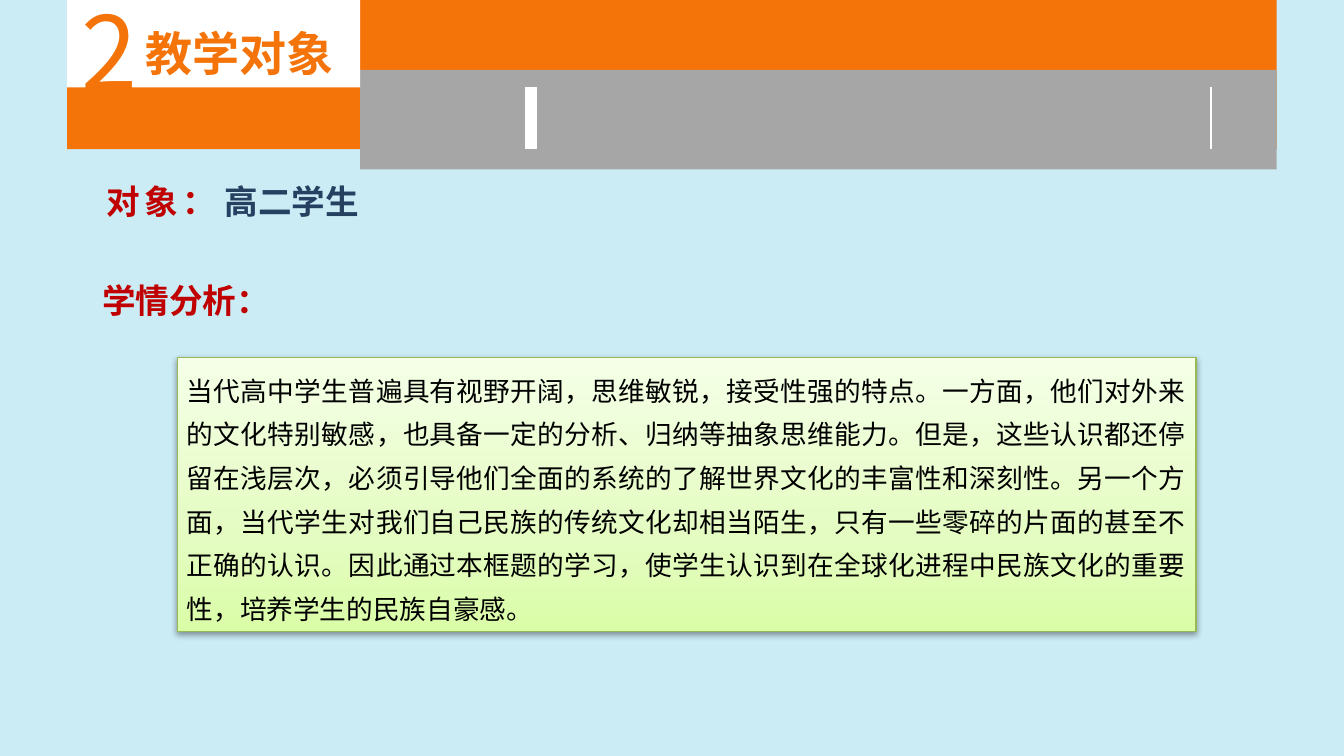
from dataclasses import dataclass

from lxml import etree
from pptx import Presentation
from pptx import util as u
from pptx.dml.color import RGBColor
from pptx.enum import shapes, text
from pptx.oxml import ns, parse_xml
from pptx.shapes.autoshape import Shape
from pptx.slide import Slide

SKY = RGBColor(0xCB, 0xEC, 0xF5)
ORANGE = RGBColor(0xF4, 0x74, 0x0A)
GRAY = RGBColor(0xA6, 0xA6, 0xA6)
WHITE = RGBColor(0xFF, 0xFF, 0xFF)
RED = RGBColor(0xC0, 0x00, 0x00)
NAVY = RGBColor(0x25, 0x40, 0x61)
BLACK = RGBColor(0x00, 0x00, 0x00)
GREEN = RGBColor(0x98, 0xB9, 0x55)
GRADIENT_STOPS = (
    (0, RGBColor(0xDA, 0xFD, 0xA7)),
    (35, RGBColor(0xE4, 0xFC, 0xC2)),
    (100, RGBColor(0xF5, 0xFF, 0xE7)),
)

SLIDE_WIDTH = u.Inches(10)
SLIDE_HEIGHT = SLIDE_WIDTH * 9 // 16
HEADING_FONT = "Noto Sans CJK SC"
BODY_FONT = "Arial"
BODY_SPACING = u.Pt(23.4)
ANALYSIS = (
    "当代高中学生普遍具有视野开阔，思维敏锐，接受性强的特点。"
    "一方面，他们对外来的文化特别敏感，也具备一定的分析、归纳等抽象思维能力。"
    "但是，这些认识都还停留在浅层次，必须引导他们全面的系统的了解世界文化的丰富性和深刻性。"
    "另一个方面，当代学生对我们自己民族的传统文化却相当陌生，"
    "只有一些零碎的片面的甚至不正确的认识。"
    "因此通过本框题的学习，使学生认识到在全球化进程中民族文化的重要性，培养学生的民族自豪感。"
)


@dataclass(frozen=True)
class Box:
    left: float
    top: float
    width: float
    height: float


@dataclass(frozen=True)
class TextStyle:
    size: float
    color: RGBColor
    bold: bool = False
    font: str = HEADING_FONT
    align: text.PP_ALIGN = text.PP_ALIGN.LEFT
    spacing: float | int | None = None


@dataclass(frozen=True)
class Label:
    words: str
    box: Box
    color: RGBColor
    align: text.PP_ALIGN


@dataclass(frozen=True)
class Divider:
    x: float
    weight: float


LABELS = (
    Label("对象：", Box(0.72, 1.28, 0.71, 0.4), RED, text.PP_ALIGN.JUSTIFY),
    Label("高二学生", Box(1.6, 1.28, 4.54, 0.4), NAVY, text.PP_ALIGN.JUSTIFY),
    Label("学情分析：", Box(0.69, 2.02, 1.28, 0.4), RED, text.PP_ALIGN.LEFT),
)
DIVIDERS = (Divider(3.95, 6.5), Divider(9.01, 1.5))


def inches(box: Box) -> tuple[int, ...]:
    return tuple(u.Inches(n) for n in (box.left, box.top, box.width, box.height))


def add_rectangle(slide: Slide, box: Box, color: RGBColor) -> Shape:
    shape = slide.shapes.add_shape(shapes.MSO_SHAPE.RECTANGLE, *inches(box))
    shape.shadow.inherit = False
    shape.fill.solid()
    shape.fill.fore_color.rgb = color
    shape.line.fill.background()
    return shape


def add_divider(slide: Slide, divider: Divider) -> None:
    x = u.Inches(divider.x)
    line = slide.shapes.add_connector(
        shapes.MSO_CONNECTOR.STRAIGHT, x, u.Inches(0.65), x, u.Inches(1.11)
    )
    line.line.color.rgb = WHITE
    line.line.width = u.Pt(divider.weight)
    etree.SubElement(line._element.spPr, ns.qn("a:effectLst"))


def write(shape: Shape, words: str, style: TextStyle) -> None:
    shape.text_frame.text = words
    paragraph = shape.text_frame.paragraphs[0]
    paragraph.alignment = style.align
    paragraph.line_spacing = style.spacing
    run = paragraph.runs[0]
    run.font.size = u.Pt(style.size)
    run.font.bold = style.bold
    run.font.name = style.font
    run.font.color.rgb = style.color
    east_asian = etree.SubElement(run._r.rPr, ns.qn("a:ea"))
    east_asian.set("typeface", HEADING_FONT)


def set_compact_frame(shape: Shape) -> None:
    frame = shape.text_frame
    frame.word_wrap = True
    frame.vertical_anchor = text.MSO_ANCHOR.TOP
    frame.margin_left = frame.margin_right = u.Inches(0.07)
    frame.margin_top = frame.margin_bottom = u.Inches(0.04)


def add_label(slide: Slide, label: Label) -> None:
    shape = slide.shapes.add_textbox(*inches(label.box))
    set_compact_frame(shape)
    style = TextStyle(18, label.color, True, align=label.align, spacing=BODY_SPACING)
    write(shape, label.words, style)


def add_title(slide: Slide) -> None:
    panel = add_rectangle(slide, Box(0.5, -0.09, 2.18, 0.74), WHITE)
    panel.text_frame.word_wrap = True
    panel.text_frame.vertical_anchor = text.MSO_ANCHOR.BOTTOM
    panel.text_frame.margin_left = u.Inches(0.48)
    write(panel, "教学对象",
          TextStyle(25.2, ORANGE, True, align=text.PP_ALIGN.CENTER, spacing=1.5))
    number = slide.shapes.add_textbox(*inches(Box(0.51, -0.13, 0.57, 1.01)))
    number.text_frame.word_wrap = False
    write(number, "2", TextStyle(54, ORANGE))


def add_analysis(slide: Slide) -> None:
    panel = add_rectangle(slide, Box(1.32, 2.66, 7.58, 2.04), WHITE)
    panel.line.color.rgb = GREEN
    panel.line.width = u.Pt(0.75)
    stops = "".join(
        f'<a:gs pos="{position * 1000}"><a:srgbClr val="{color}"/></a:gs>'
        for position, color in GRADIENT_STOPS
    )
    gradient = parse_xml(
        f'<a:gradFill {ns.nsdecls("a")} rotWithShape="1"><a:gsLst>{stops}</a:gsLst>'
        '<a:lin ang="16200000" scaled="0"/></a:gradFill>'
    )
    shadow = parse_xml(
        f'<a:outerShdw {ns.nsdecls("a")} blurRad="{u.Pt(3.1)}" dist="{u.Pt(1.6)}" '
        'dir="5400000" rotWithShape="0"><a:srgbClr val="000000">'
        '<a:alpha val="38000"/></a:srgbClr></a:outerShdw>'
    )
    properties = panel._element.spPr
    properties.replace(properties.find(ns.qn("a:solidFill")), gradient)
    properties.find(ns.qn("a:effectLst")).append(shadow)
    set_compact_frame(panel)
    write(panel, ANALYSIS,
          TextStyle(14.3, BLACK, font=BODY_FONT, align=text.PP_ALIGN.JUSTIFY,
                    spacing=BODY_SPACING))


def main() -> None:
    presentation = Presentation()
    presentation.slide_width = SLIDE_WIDTH
    presentation.slide_height = SLIDE_HEIGHT
    slide = presentation.slides.add_slide(presentation.slide_layouts[6])
    slide.background.fill.solid()
    slide.background.fill.fore_color.rgb = SKY
    add_rectangle(slide, Box(0.5, -0.02, 9, 1.13), ORANGE)
    add_rectangle(slide, Box(2.68, 0.52, 6.82, 0.74), GRAY)
    for divider in DIVIDERS:
        add_divider(slide, divider)
    add_title(slide)
    for label in LABELS:
        add_label(slide, label)
    add_analysis(slide)
    presentation.save("out.pptx")


if __name__ == "__main__":
    main()
